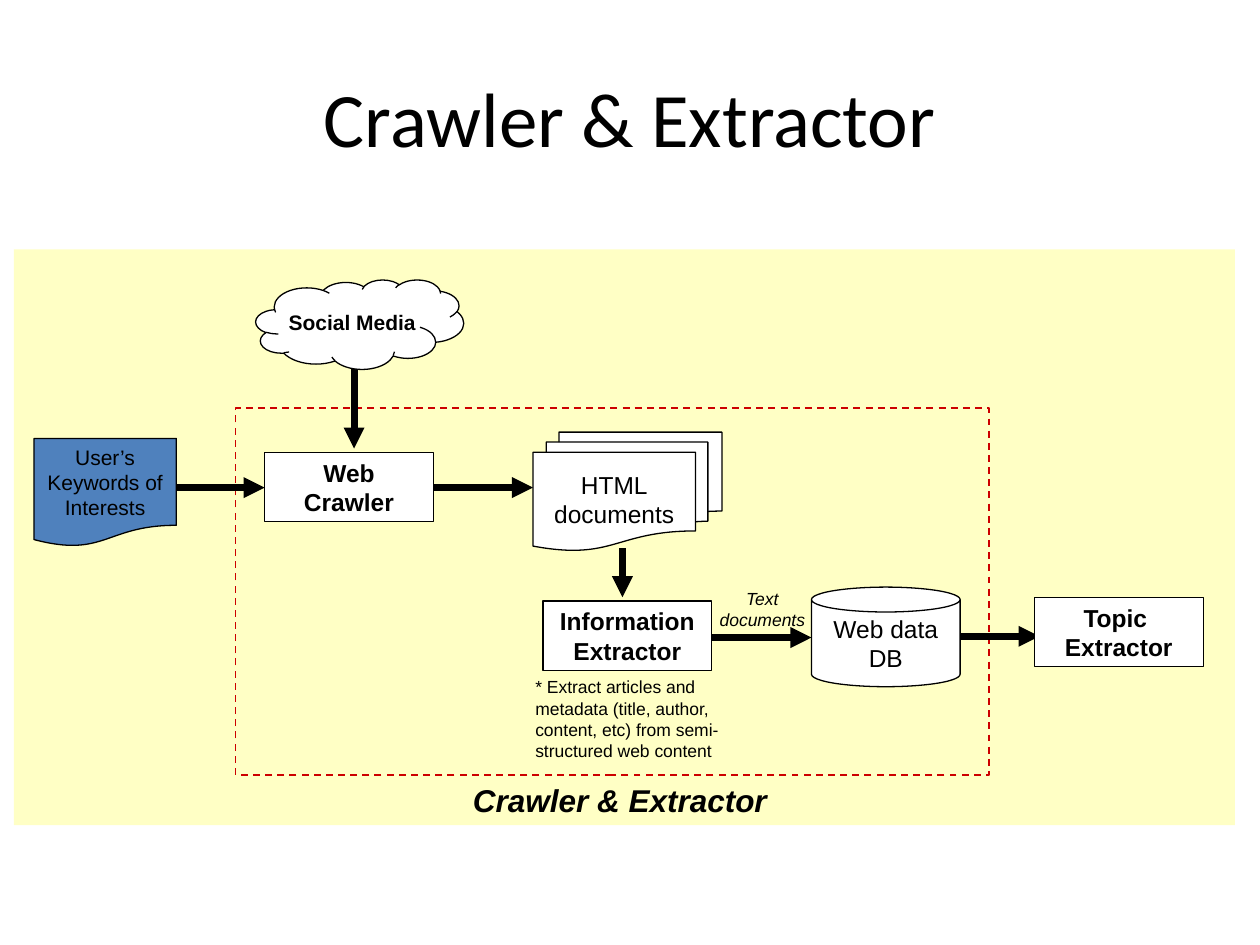
from dataclasses import dataclass

from lxml.etree import SubElement
from pptx import Presentation
from pptx.dml.color import RGBColor
from pptx.enum.dml import MSO_LINE
from pptx.enum.shapes import MSO_CONNECTOR, MSO_SHAPE as Shape
from pptx.enum.text import MSO_ANCHOR as Anchor, PP_ALIGN as Align
from pptx.oxml.ns import qn
from pptx.util import Inches, Pt


@dataclass(frozen=True)
class Theme:
    ink: str = "000000"
    paper: str = "FFFFFF"
    panel: str = "FFFF99"
    keywords: str = "4F81BD"
    border: str = "CC0000"
    font: str = "Arial"
    title_font: str = "Calibri"
    title: int = 44
    caption: int = 18
    node: int = 14
    label: int = 12
    note: int = 10
    outline: float = 0.75
    arrow: float = 4


THEME = Theme()


@dataclass(frozen=True)
class Box:
    left: float
    top: float
    width: float
    height: float

    def inches(self) -> tuple:
        return tuple(Inches(v) for v in (self.left, self.top, self.width, self.height))


@dataclass(frozen=True)
class Style:
    size: int = THEME.node
    bold: bool = False
    italic: bool = False
    align: Align = Align.CENTER
    font: str = THEME.font


@dataclass(frozen=True)
class Node:
    kind: Shape
    box: Box
    lines: tuple
    style: Style = Style()
    fill: str = THEME.paper


@dataclass(frozen=True)
class Label:
    box: Box
    lines: tuple
    style: Style


@dataclass(frozen=True)
class Arrow:
    x1: float
    y1: float
    x2: float
    y2: float


def rgb(color: str) -> RGBColor:
    return RGBColor.from_string(color)


def write(tf, lines: tuple, style: Style, anchor: Anchor, wrap: bool) -> None:
    tf.word_wrap = wrap
    tf.vertical_anchor = anchor
    for i, line in enumerate(lines):
        p = tf.paragraphs[0] if i == 0 else tf.add_paragraph()
        p.alignment = style.align
        r = p.add_run()
        r.text = line
        r.font.name, r.font.size = style.font, Pt(style.size)
        r.font.bold, r.font.italic = style.bold, style.italic
        r.font.color.rgb = rgb(THEME.ink)


def add_shape(s, kind: Shape, box: Box):
    sp = s.shapes.add_shape(kind, *box.inches())
    sp.shadow.inherit = False
    return sp


def add_panel(s, box: Box) -> None:
    sp = add_shape(s, Shape.RECTANGLE, box)
    sp.fill.solid()
    sp.fill.fore_color.rgb = rgb(THEME.panel)
    color = sp.fill._xPr.find(f".//{qn('a:srgbClr')}")
    SubElement(color, qn("a:alpha"), val="57000")
    sp.line.fill.background()


def add_border(s, box: Box) -> None:
    sp = add_shape(s, Shape.RECTANGLE, box)
    sp.fill.background()
    sp.line.color.rgb = rgb(THEME.border)
    sp.line.width = Pt(1)
    sp.line.dash_style = MSO_LINE.DASH


def add_node(s, node: Node):
    sp = add_shape(s, node.kind, node.box)
    sp.fill.solid()
    sp.fill.fore_color.rgb = rgb(node.fill)
    sp.line.color.rgb = rgb(THEME.ink)
    sp.line.width = Pt(THEME.outline)
    write(sp.text_frame, node.lines, node.style, Anchor.MIDDLE, False)
    return sp


def add_label(s, label: Label) -> None:
    sp = s.shapes.add_textbox(*label.box.inches())
    write(sp.text_frame, label.lines, label.style, Anchor.TOP, True)


def add_arrow(s, arrow: Arrow) -> None:
    ends = (Inches(v) for v in (arrow.x1, arrow.y1, arrow.x2, arrow.y2))
    cxn = s.shapes.add_connector(MSO_CONNECTOR.STRAIGHT, *ends)
    cxn.line.color.rgb = rgb(THEME.ink)
    cxn.line.width = Pt(THEME.arrow)
    SubElement(cxn.line._get_or_add_ln(), qn("a:tailEnd"), type="triangle")
    SubElement(cxn._element.spPr, qn("a:effectLst"))


def process(left: float, top: float, *lines: str) -> Node:
    """Describe one processing step; all steps share a size and bold text."""
    return Node(Shape.RECTANGLE, Box(left, top, 1.34, 0.55), lines, Style(bold=True))


CLOUD = Node(Shape.CLOUD, Box(2.03, 2.22, 1.65, 0.71), ("Social Media",),
             Style(THEME.label, bold=True))
NODES = (
    Node(Shape.CAN, Box(6.44, 4.66, 1.18, 0.79), ("Web data", "DB")),
    process(2.1, 3.59, "Web", "Crawler"),
    Node(Shape.FLOWCHART_MULTIDOCUMENT, Box(4.23, 3.43, 1.5, 0.94), ("HTML", "documents")),
    process(4.31, 4.77, "Information", "Extractor"),
    Node(Shape.FLOWCHART_DOCUMENT, Box(0.27, 3.48, 1.13, 0.86),
         ("User’s", "Keywords of", "Interests"), Style(THEME.label), THEME.keywords),
    process(8.21, 4.74, "Topic ", "Extractor"),
)
ARROWS = (
    Arrow(1.4, 3.87, 2.1, 3.87),
    Arrow(3.44, 3.87, 4.23, 3.87),
    Arrow(2.81, 2.93, 2.81, 3.56),
    Arrow(4.94, 4.35, 4.94, 4.74),
    Arrow(5.65, 5.06, 6.44, 5.06),
    Arrow(7.62, 5.05, 8.25, 5.05),
)
LABELS = (
    Label(Box(4.15, 5.32, 1.89, 0.77),
          ("* Extract articles and metadata (title, author, content, etc) "
           "from semi-structured web content",),
          Style(THEME.note, align=Align.LEFT)),
    Label(Box(5.54, 4.62, 1.02, 0.43), ("Text", "documents"),
          Style(THEME.note, italic=True)),
    Label(Box(3.57, 6.15, 2.7, 0.4), ("Crawler & Extractor",),
          Style(THEME.caption, bold=True, italic=True)),
)


def main() -> None:
    prs = Presentation()
    prs.slide_width, prs.slide_height = Inches(10), Inches(7.5)
    s = prs.slides.add_slide(prs.slide_layouts[5])

    title = s.shapes.title
    title.left, title.top, title.width, title.height = Box(0.5, 0.3, 9, 1.25).inches()
    write(title.text_frame, ("Crawler & Extractor",),
          Style(THEME.title, font=THEME.title_font), Anchor.MIDDLE, True)

    add_panel(s, Box(0.11, 1.98, 9.69, 4.57))
    add_border(s, Box(1.87, 3.24, 5.98, 2.91))
    for arrow in ARROWS:
        add_arrow(s, arrow)
    for node in NODES:
        add_node(s, node)
    tf = add_node(s, CLOUD).text_frame
    tf.margin_left = tf.margin_right = Inches(0.02)
    for label in LABELS:
        add_label(s, label)
    prs.save("out.pptx")


if __name__ == "__main__":
    main()
